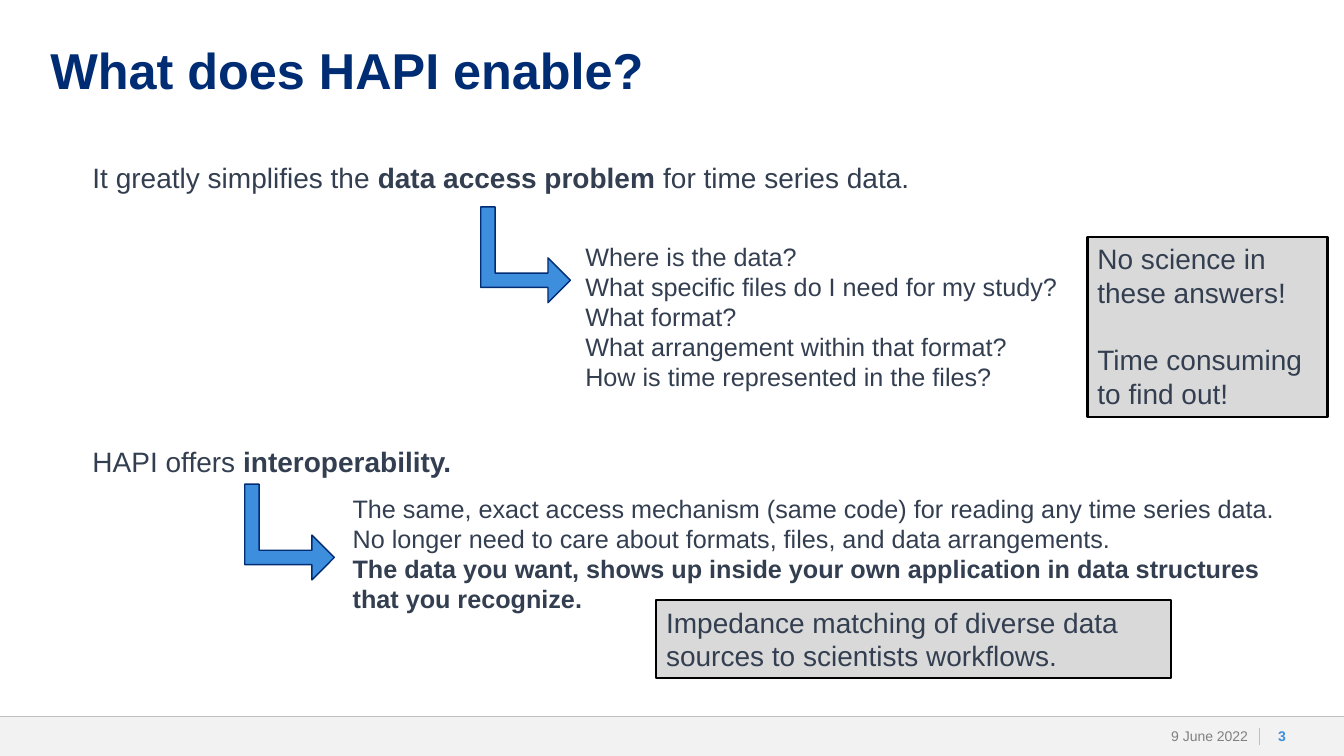
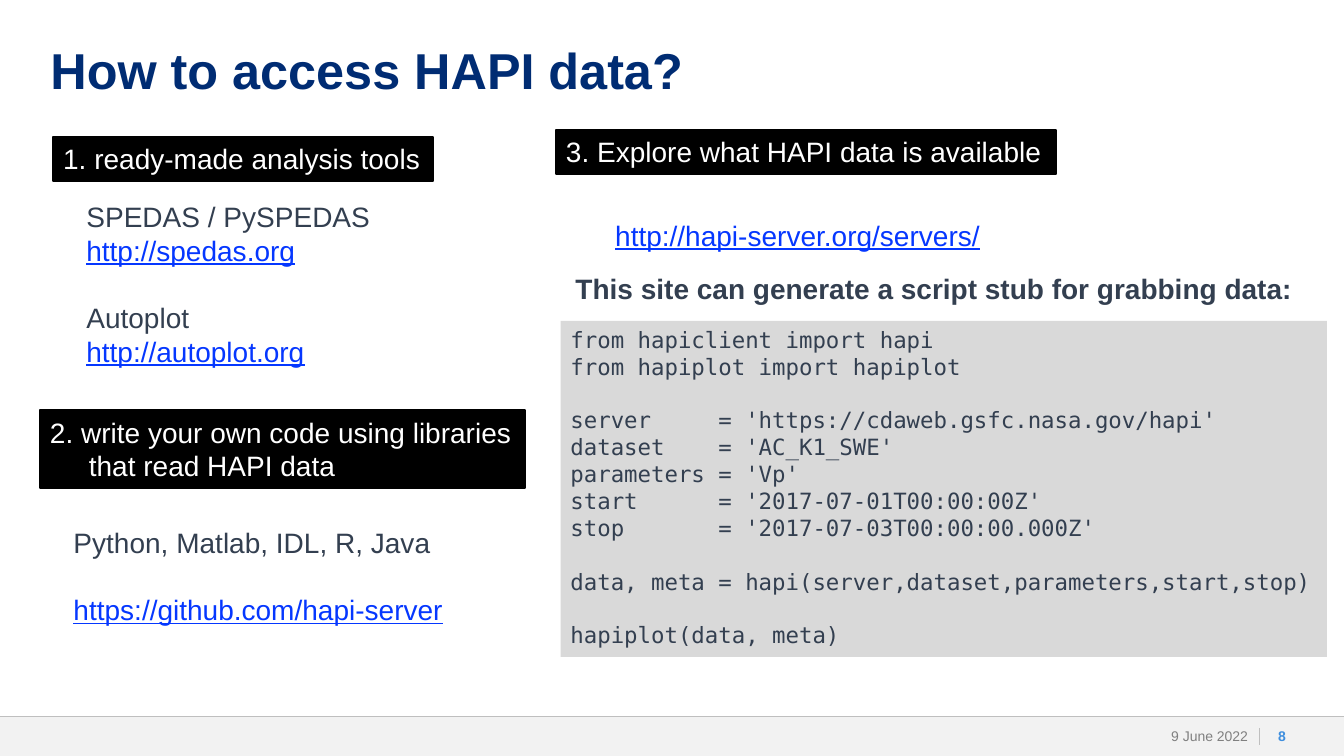
from lxml.etree import SubElement
from pptx import Presentation
from pptx.dml.color import RGBColor
from pptx.enum.shapes import MSO_CONNECTOR, MSO_SHAPE
from pptx.enum.text import MSO_ANCHOR, PP_ALIGN
from pptx.oxml.ns import qn
from pptx.util import Pt

# Shared look
WHITE = RGBColor(0xFF, 0xFF, 0xFF)
BLACK = RGBColor(0, 0, 0)
NAVY = RGBColor(0x00, 0x2C, 0x73)
BLUE = RGBColor(0x3E, 0x8E, 0xDE)
LINK_BLUE = RGBColor(0x05, 0x37, 0xFF)
SLATE = RGBColor(0x33, 0x3F, 0x50)
GRAY = RGBColor(0x80, 0x80, 0x80)
RULE_GRAY = RGBColor(0xBF, 0xBF, 0xBF)
PANEL_GRAY = RGBColor(0xD9, 0xD9, 0xD9)
BAND_GRAY = RGBColor(0xF2, 0xF2, 0xF2)

FONT = "Arial"
CODE_FONT = "DejaVu Sans Mono"
LEADING = 1.2
WIDTH, HEIGHT = 960, 540
FOOTER_TOP, FOOTER_HEIGHT = 512, 28
DATE = "9 June 2022"

BOLD = {"bold": True}
LINK = {"color": LINK_BLUE, "underline": True}

CODE_BLOCKS = [
    ["from hapiclient import hapi",
     "from hapiplot import hapiplot"],
    ["server     = 'https://cdaweb.gsfc.nasa.gov/hapi'",
     "dataset    = 'AC_K1_SWE'",
     "parameters = 'Vp'",
     "start      = '2017-07-01T00:00:00Z'",
     "stop       = '2017-07-03T00:00:00.000Z'"],
    ["data, meta = hapi(server,dataset,parameters,start,stop)"],
    ["hapiplot(data, meta)"],
]


def format_font(font, size, name=FONT, color=SLATE, bold=False, underline=False):
    font.size = Pt(size)
    font.name = name
    font.color.rgb = color
    font.bold = bold
    font.underline = underline


def write_text(shape, blocks, size=20, align=PP_ALIGN.LEFT, anchor=MSO_ANCHOR.TOP,
               margins=(7.2, 3.6), spacing=None, hanging=0, **font_format):
    """Write blocks of paragraphs, one line apart; a paragraph is a string or
    a list of (text, format) runs. Lines after the first get the hanging indent."""
    frame = shape.text_frame
    frame.word_wrap = True
    frame.vertical_anchor = anchor
    frame.margin_left = frame.margin_right = Pt(margins[0])
    frame.margin_top = frame.margin_bottom = Pt(margins[1])
    paragraph = None
    for block_index, block in enumerate(blocks):
        for line_index, line in enumerate(block):
            first = paragraph is None
            paragraph = frame.paragraphs[0] if first else frame.add_paragraph()
            paragraph.alignment = align
            paragraph.line_spacing = spacing or Pt(size * LEADING)
            if block_index and not line_index:
                paragraph.space_before = Pt(size * LEADING)
            if hanging and not first:
                paragraph._p.get_or_add_pPr().set("marL", str(Pt(hanging)))
            for text, changes in [(line, {})] if isinstance(line, str) else line:
                run = paragraph.add_run()
                run.text = text
                format_font(run.font, size, **{**font_format, **changes})


def add_text(slide, box, blocks, **text_format):
    write_text(slide.shapes.add_textbox(*map(Pt, box)), blocks, **text_format)


def add_box(slide, box, fill, line=None, line_width=1.5, kind=MSO_SHAPE.RECTANGLE):
    shape = slide.shapes.add_shape(kind, *map(Pt, box))
    shape.shadow.inherit = False
    shape.fill.solid()
    shape.fill.fore_color.rgb = fill
    if line is None:
        shape.line.fill.background()
    else:
        shape.line.color.rgb = line
        shape.line.width = Pt(line_width)
    return shape


def add_panel(slide, box, blocks, line=BLACK, **text_format):
    write_text(add_box(slide, box, PANEL_GRAY, line), blocks, **text_format)


def add_label(slide, box, lines, **text_format):
    write_text(add_box(slide, box, BLACK, BLACK), [lines], color=WHITE, **text_format)


def add_bent_arrow(slide, left, top):
    arrow = add_box(slide, (left, top, 68.4, 64), BLUE, NAVY, 1, MSO_SHAPE.BENT_UP_ARROW)
    arrow.rotation = 90
    for index, value in enumerate((0.16, 0.25, 0.25)):
        arrow.adjustments[index] = value


def add_rule(slide, *ends):
    rule = slide.shapes.add_connector(MSO_CONNECTOR.STRAIGHT, *map(Pt, ends))
    rule.line.color.rgb = RULE_GRAY
    rule.line.width = Pt(0.5)
    SubElement(rule._element.spPr, qn("a:effectLst"))


def add_slide(presentation, title, number):
    """Blank slide with the shared footer and title."""
    slide = presentation.slides.add_slide(presentation.slide_layouts[6])
    add_box(slide, (0, FOOTER_TOP, WIDTH, FOOTER_HEIGHT), BAND_GRAY)
    add_rule(slide, 0, FOOTER_TOP, WIDTH, FOOTER_TOP)
    add_rule(slide, 899.5, 520, 899.5, 532)
    add_text(slide, (36, 33, 888, 60), [[title]], size=36, color=NAVY, bold=True,
             margins=(0, 0), spacing=0.9)
    add_text(slide, (790.5, FOOTER_TOP, 108, FOOTER_HEIGHT), [[DATE]], size=10, color=GRAY,
             align=PP_ALIGN.RIGHT, anchor=MSO_ANCHOR.MIDDLE, margins=(7.2, 0))
    add_text(slide, (900.7, FOOTER_TOP, 30, FOOTER_HEIGHT), [[str(number)]], size=10,
             color=BLUE, bold=True, align=PP_ALIGN.CENTER, anchor=MSO_ANCHOR.MIDDLE,
             margins=(0, 0))
    return slide


def build_benefits(presentation):
    slide = add_slide(presentation, "What does HAPI enable?", 3)

    # Data access problem
    add_text(slide, (59, 111, 734, 32), [[[
        ("It greatly simplifies the ", {}), ("data access problem ", BOLD),
        ("for time series data.", {})]]])
    add_bent_arrow(slide, 341.2, 150)
    add_text(slide, (411, 168.5, 357, 117), [[
        "Where is the data?",
        "What specific files do I need for my study?",
        "What format?",
        "What arrangement within that format?",
        "How is time represented in the files?"]], size=18)
    add_panel(slide, (776.8, 169.2, 171.5, 128.4),
              [["No science in these answers!"], ["Time consuming to find out!"]])

    # Interoperability
    add_text(slide, (59, 314, 734, 32),
             [[[("HAPI offers ", {}), ("interoperability.", BOLD)]]])
    add_bent_arrow(slide, 172.6, 348)
    add_text(slide, (244.8, 348.5, 680, 94), [[
        "The same, exact access mechanism (same code) for reading any time series data.",
        "No longer need to care about formats, files, and data arrangements.",
        [("The data you want, shows up inside your own application in data structures "
          "that you recognize.", BOLD)]]], size=18)
    add_panel(slide, (468.7, 428.6, 368, 55.6),
              [["Impedance matching of diverse data sources to scientists workflows."]])


def build_access(presentation):
    slide = add_slide(presentation, "How to access HAPI data?", 8)

    # Ready-made tools
    add_label(slide, (38, 97.8, 271.6, 31.8), ["1. ready-made analysis tools"])
    add_text(slide, (54.6, 139, 220, 128), [
        ["SPEDAS / PySPEDAS", [("http://spedas.org", LINK)]],
        ["Autoplot", [("http://autoplot.org", LINK)]]])

    # Libraries
    add_label(slide, (28.6, 293, 346.6, 55.6),
              ["2. write your own code using libraries", "that read HAPI data"], hanging=27.8)
    add_text(slide, (45.4, 371.5, 284, 80), [
        ["Python, Matlab, IDL, R, Java"],
        [[("https://github.com/hapi-server", LINK)]]])

    # Server browser and generated script
    add_label(slide, (397.2, 92.8, 357.4, 31.8), ["3. Explore what HAPI data is available"])
    add_panel(slide, (400.4, 229.2, 547.4, 240), CODE_BLOCKS, line=None,
              size=16, name=CODE_FONT)
    add_text(slide, (404, 190.2, 534, 32),
             [["This site can generate a script stub for grabbing data:"]], bold=True)
    add_text(slide, (432.4, 152.2, 282, 32), [["http://hapi-server.org/servers/"]], **LINK)


def main():
    presentation = Presentation()
    presentation.slide_width = Pt(WIDTH)
    presentation.slide_height = Pt(HEIGHT)
    build_benefits(presentation)
    build_access(presentation)
    presentation.save("out.pptx")


if __name__ == "__main__":
    main()
